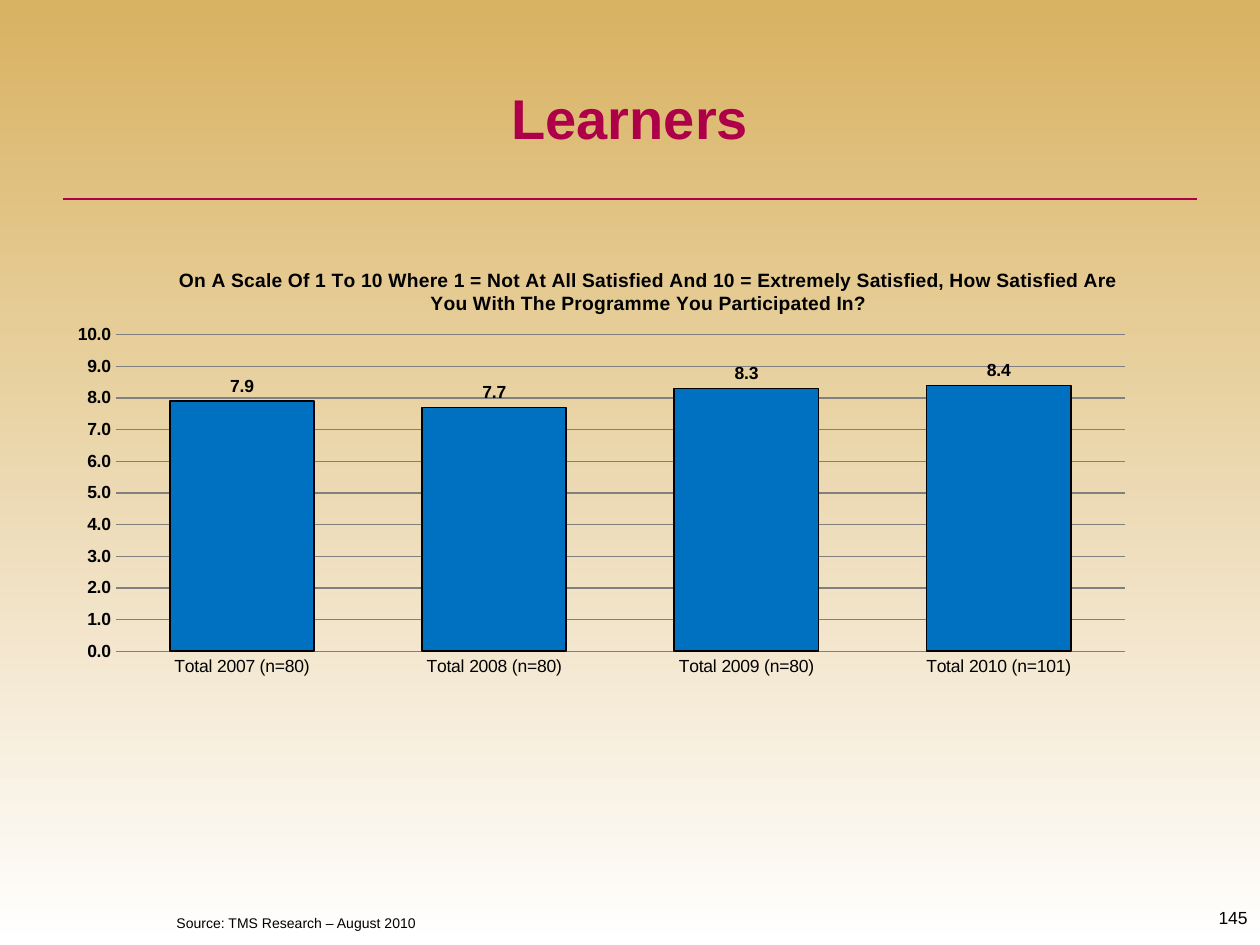
from lxml import etree
from pptx import Presentation
from pptx.chart.data import CategoryChartData
from pptx.dml.color import RGBColor
from pptx.enum.chart import XL_CHART_TYPE, XL_LABEL_POSITION, XL_TICK_MARK
from pptx.enum.shapes import MSO_CONNECTOR
from pptx.enum.text import MSO_ANCHOR, PP_ALIGN
from pptx.oxml import parse_xml
from pptx.oxml.ns import nsdecls, qn
from pptx.util import Pt

COLUMNS = XL_CHART_TYPE.COLUMN_CLUSTERED
OUTSIDE = XL_LABEL_POSITION.OUTSIDE_END
NO_TICK = XL_TICK_MARK.NONE
STRAIGHT = MSO_CONNECTOR.STRAIGHT
TOP, MIDDLE, BOTTOM = MSO_ANCHOR.TOP, MSO_ANCHOR.MIDDLE, MSO_ANCHOR.BOTTOM
LEFT, CENTER, RIGHT = PP_ALIGN.LEFT, PP_ALIGN.CENTER, PP_ALIGN.RIGHT

# Content
TITLE = "Learners"
QUESTION = ("On A Scale Of 1 To 10 Where 1 = Not At All Satisfied And 10 = Extremely "
            "Satisfied, How Satisfied Are You With The Programme You Participated In?")
SCORES = [("Total 2007 (n=80)", 7.9), ("Total 2008 (n=80)", 7.7),
          ("Total 2009 (n=80)", 8.3), ("Total 2010 (n=101)", 8.4)]
SOURCE = "Source: TMS Research – August 2010"
PAGE = "145"

# Style
FONT = "Arial"
CRIMSON, BLACK, BLUE, GREY = "AD0049", "000000", "0070C0", "808080"
BACKGROUND = ["D9B262", "FFFFFF"]
PLOT = {"x": 0.08, "y": 0.17, "w": 0.85, "h": 0.58}
HEADING = {"x": 0.13, "y": 0.04}


def px(n):
    return n * 914400 // 126


def rgb(value):
    return RGBColor.from_string(value)


def set_font(font, size, color=BLACK, bold=False):
    font.name, font.size, font.bold = FONT, Pt(size), bold
    font.color.rgb = rgb(color)


def set_line(line, color, width):
    line.color.rgb = rgb(color)
    line.width = Pt(width)


def write(sp, text, size, align, anchor, color=BLACK, bold=False):
    tf = sp.text_frame
    tf.word_wrap = True
    tf.vertical_anchor = anchor
    p = tf.paragraphs[0]
    p.alignment = align
    r = p.add_run()
    r.text = text
    set_font(r.font, size, color, bold)
    return p


def manual_layout(sizes, inner=False):
    target = '<c:layoutTarget val="inner"/>' if inner else ""
    modes = "".join(f'<c:{k}Mode val="edge"/>' for k in "xy")
    values = "".join(f'<c:{k} val="{v}"/>' for k, v in sizes.items())
    return parse_xml(f'<c:layout {nsdecls("c")}><c:manualLayout>{target}{modes}{values}'
                     '</c:manualLayout></c:layout>')


def place(parent, layout, index):
    for old in parent.findall(qn("c:layout")):
        parent.remove(old)
    parent.insert(index, layout)


prs = Presentation()
prs.slide_width, prs.slide_height = px(1260), px(945)
slide = prs.slides.add_slide(prs.slide_layouts[5])
shapes = slide.shapes

# Background running from gold down to white
fill = slide.background.fill
fill.gradient()
fill.gradient_angle = 270
for stop, position, color in zip(fill.gradient_stops, (0, 1), BACKGROUND):
    stop.position = position
    stop.color.rgb = rgb(color)

# Title and rule
title = shapes.title
title.left, title.top, title.width, title.height = px(63), px(38), px(1134), px(158)
write(title, TITLE, 32, CENTER, MIDDLE, CRIMSON, True)
rule = shapes.add_connector(STRAIGHT, px(63), px(199), px(1197), px(199))
set_line(rule.line, CRIMSON, 0.75)
etree.SubElement(rule._element.spPr, qn("a:effectLst"))

# Chart
data = CategoryChartData(number_format="0.0")
data.categories = [name for name, _ in SCORES]
data.add_series("Series 1", [score for _, score in SCORES])
chart = shapes.add_chart(COLUMNS, px(21), px(242), px(1187), px(546), data).chart
set_font(chart.font, 18)
chart.has_legend = False

tf = chart.chart_title.text_frame
r = tf.paragraphs[0].add_run()
r.text = QUESTION
set_font(r.font, 11, bold=True)
chart.chart_title.include_in_layout = False
place(chart.chart_title._element, manual_layout(HEADING), 1)
place(chart._chartSpace.chart.plotArea, manual_layout(PLOT, inner=True), 0)

# Axes
values, categories = chart.value_axis, chart.category_axis
for axis, bold in ((values, True), (categories, False)):
    axis.major_tick_mark = axis.minor_tick_mark = NO_TICK
    set_font(axis.tick_labels.font, 10, bold=bold)
values.minimum_scale, values.maximum_scale, values.major_unit = 0, 10, 1
values.tick_labels.number_format = "0.0"
values.tick_labels.number_format_is_linked = False
values.format.line.fill.background()
set_line(values.major_gridlines.format.line, GREY, 0.75)
set_line(categories.format.line, GREY, 0.75)

# Columns and their labels
plot = chart.plots[0]
plot.gap_width = 75
plot.vary_by_categories = False
series = plot.series[0]
series.format.fill.solid()
series.format.fill.fore_color.rgb = rgb(BLUE)
set_line(series.format.line, BLACK, 1)
labels = series.data_labels
labels.show_value = True
labels.position = OUTSIDE
labels.number_format = "0.0"
labels.number_format_is_linked = False
set_font(labels.font, 10, bold=True)

# Page number and source
page = shapes.add_textbox(px(1061), px(901), px(199), px(44))
write(page, PAGE, 10, RIGHT, TOP)
source = shapes.add_textbox(px(164), px(908), px(724), px(29))
write(source, SOURCE, 8, LEFT, BOTTOM)

prs.save("out.pptx")
